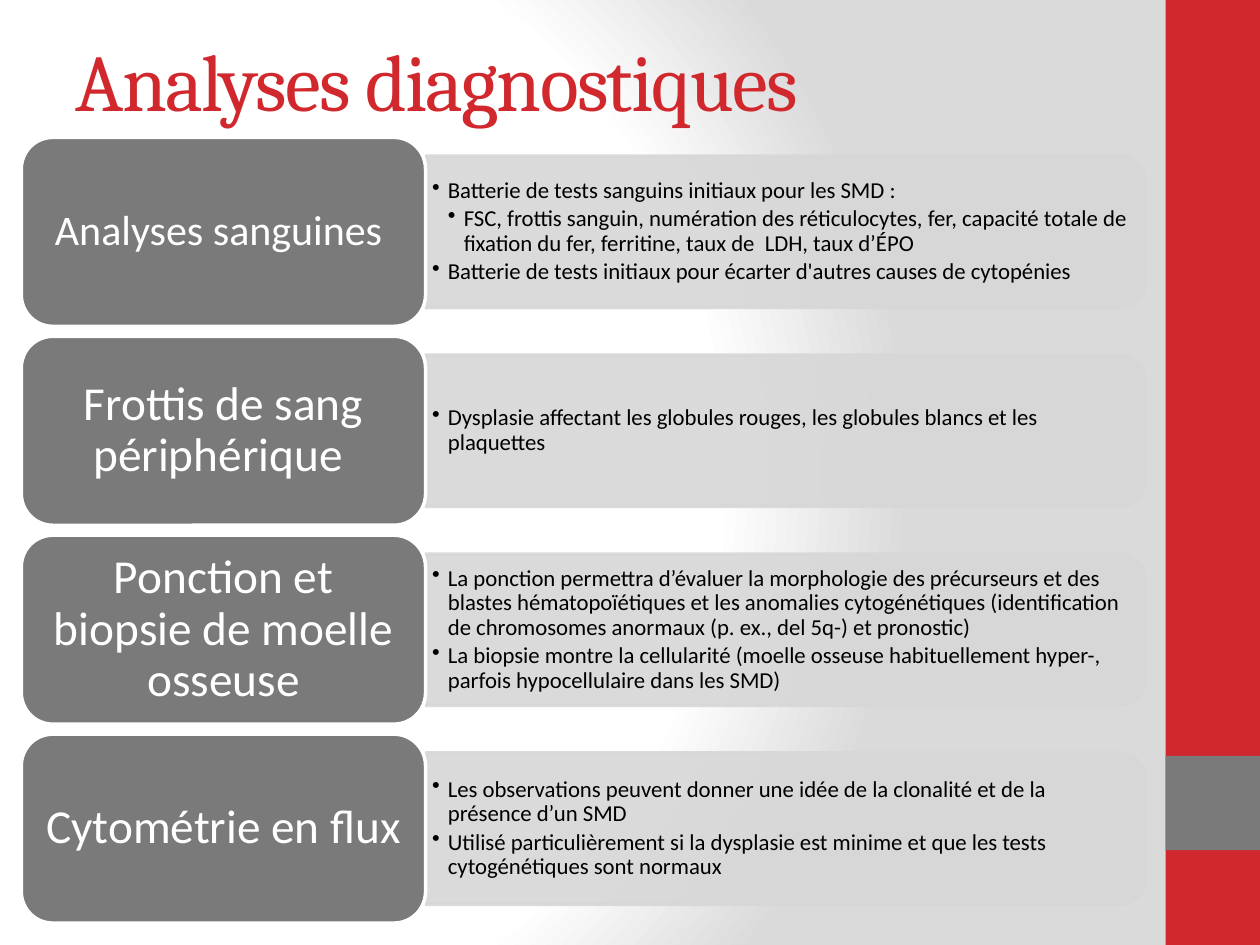
from lxml import etree
from pptx import Presentation
from pptx.dml.color import RGBColor
from pptx.enum.shapes import MSO_SHAPE
from pptx.enum.text import MSO_ANCHOR, PP_ALIGN
from pptx.oxml import parse_xml
from pptx.oxml.ns import nsdecls, qn
from pptx.util import Cm, Pt

RECT = MSO_SHAPE.RECTANGLE
ROUNDED = MSO_SHAPE.ROUNDED_RECTANGLE
ROUNDED_TOP = MSO_SHAPE.ROUND_2_SAME_RECTANGLE
MIDDLE = MSO_ANCHOR.MIDDLE
LEFT, CENTER = PP_ALIGN.LEFT, PP_ALIGN.CENTER

RED = RGBColor(0xD1, 0x28, 0x2E)
GREY = RGBColor(0x7A, 0x7A, 0x7A)
PALE = RGBColor(0xD7, 0xD7, 0xD7)
WHITE = RGBColor(0xFF, 0xFF, 0xFF)
BLACK = RGBColor(0x00, 0x00, 0x00)

# Content: label, label size, details as (level, text)
TITLE = "Analyses diagnostiques"
ANALYSES = [
    ("Analyses sanguines ", 24, [
        (1, "Batterie de tests sanguins initiaux pour les SMD :"),
        (2, "FSC, frottis sanguin, numération des réticulocytes, fer, capacité "
            "totale de fixation du fer, ferritine, taux de  LDH, taux d’ÉPO"),
        (1, "Batterie de tests initiaux pour écarter d'autres causes de cytopénies"),
    ]),
    ("Frottis de sang périphérique ", 27, [
        (1, "Dysplasie affectant les globules rouges, les globules blancs et les "
            "plaquettes"),
    ]),
    ("Ponction et biopsie de moelle osseuse", 27, [
        (1, "La ponction permettra d’évaluer la morphologie des précurseurs et des "
            "blastes hématopoïétiques et les anomalies cytogénétiques (identification "
            "de chromosomes anormaux (p. ex., del 5q-) et pronostic)"),
        (1, "La biopsie montre la cellularité (moelle osseuse habituellement hyper-, "
            "parfois hypocellulaire dans les SMD)"),
    ]),
    ("Cytométrie en flux ", 27, [
        (1, "Les observations peuvent donner une idée de la clonalité et de la "
            "présence d’un SMD"),
        (1, "Utilisé particulièrement si la dysplasie est minime et que les tests "
            "cytogénétiques sont normaux"),
    ]),
]

# Layout
SLIDE_W, SLIDE_H = Cm(25.4), Cm(19.05)
BAND_W = Cm(1.9)
LABEL_X, LABEL_W, LABEL_H = Cm(0.43), Cm(8.15), Cm(3.81)
FIRST_Y, ROW_PITCH = Cm(2.77), Cm(4.01)
PANEL_X, PANEL_W, PANEL_H = LABEL_X + LABEL_W, Cm(14.5), Cm(3.05)
DETAIL_W, DETAIL_H = Cm(14.35), Cm(2.77)
INDENT = Cm(0.32)

TITLE_FONT = {"name": "Cambria", "size": Pt(46)}
DETAIL_FONT = {"name": "Calibri", "size": Pt(13)}
DETAIL_FRAME = {"word_wrap": True, "vertical_anchor": MIDDLE,
                "margin_left": Cm(0.13), "margin_right": Cm(0.13),
                "margin_top": Cm(0.07), "margin_bottom": Cm(0.07)}
LABEL_FRAME = {"word_wrap": True, "vertical_anchor": MIDDLE,
               "margin_left": Cm(0.27), "margin_right": Cm(0.27),
               "margin_top": Cm(0.15), "margin_bottom": Cm(0.15)}

BACKGROUND = f"""<a:gradFill {nsdecls('a')} rotWithShape="1"><a:gsLst>
<a:gs pos="0"><a:srgbClr val="FFFFFF"/></a:gs>
<a:gs pos="75000"><a:srgbClr val="FFFFFF"/></a:gs>
<a:gs pos="100000"><a:srgbClr val="DADADA"/></a:gs></a:gsLst>
<a:path path="circle"><a:fillToRect l="20000" t="50000" r="100000" b="50000"/></a:path>
</a:gradFill>"""


def apply(target, values):
    for attribute, value in values.items():
        setattr(target, attribute, value)


def write(paragraph, text, color, font_values):
    run = paragraph.add_run()
    run.text = text
    apply(run.font, font_values)
    run.font.color.rgb = color
    return run


def add_block(slide, kind, box, fill, line=None):
    block = slide.shapes.add_shape(kind, *box)
    block.shadow.inherit = False
    block.fill.solid()
    block.fill.fore_color.rgb = fill
    if line is None:
        block.line.fill.background()
    else:
        block.line.color.rgb = line
        block.line.width = Pt(2)
    return block


def add_panel(slide, center_y):
    # The shape is drawn upright, then turned about its centre
    center_x = PANEL_X + PANEL_W // 2
    box = (center_x - PANEL_H // 2, center_y - PANEL_W // 2, PANEL_H, PANEL_W)
    panel = add_block(slide, ROUNDED_TOP, box, PALE, PALE)
    panel.rotation = 90
    for color in panel.element.spPr.iter(qn("a:srgbClr")):
        etree.SubElement(color, qn("a:alpha"), val="90000")


def add_details(slide, center_y, details):
    box = slide.shapes.add_textbox(PANEL_X, center_y - DETAIL_H // 2,
                                   DETAIL_W, DETAIL_H)
    frame = box.text_frame
    apply(frame, DETAIL_FRAME)
    for i, (level, text) in enumerate(details):
        paragraph = frame.add_paragraph() if i else frame.paragraphs[0]
        apply(paragraph, {"level": level, "alignment": LEFT,
                          "line_spacing": 0.9, "space_after": Pt(2)})
        properties = paragraph._p.get_or_add_pPr()
        properties.set("marL", str(INDENT * level))
        properties.set("indent", str(-INDENT))
        etree.SubElement(properties, qn("a:buChar"), char="•")
        write(paragraph, text, BLACK, DETAIL_FONT)


def add_label(slide, top, text, size):
    label = add_block(slide, ROUNDED, (LABEL_X, top, LABEL_W, LABEL_H), GREY, WHITE)
    apply(label.text_frame, LABEL_FRAME)
    paragraph = label.text_frame.paragraphs[0]
    apply(paragraph, {"alignment": CENTER, "line_spacing": 0.9})
    write(paragraph, text, WHITE, {"name": "Calibri", "size": Pt(size)})


def main():
    prs = Presentation()
    prs.slide_width, prs.slide_height = SLIDE_W, SLIDE_H
    slide = prs.slides.add_slide(prs.slide_layouts[5])

    # Background
    fill = slide.background.fill
    fill.gradient()
    gradient = slide.element.find(".//" + qn("a:gradFill"))
    gradient.getparent().replace(gradient, parse_xml(BACKGROUND))

    # Side band
    band_x = SLIDE_W - BAND_W
    add_block(slide, RECT, (band_x, 0, BAND_W, SLIDE_H), RED)
    add_block(slide, RECT, (band_x, Cm(15.24), BAND_W, BAND_W), GREY)

    # Title
    title = slide.shapes.title
    apply(title, {"left": Cm(1.27), "top": 0, "width": Cm(21.16), "height": Cm(3.18)})
    apply(title.text_frame, {"word_wrap": True, "vertical_anchor": MIDDLE})
    heading = title.text_frame.paragraphs[0]
    heading.alignment = LEFT
    run = write(heading, TITLE, RED, TITLE_FONT)
    run._r.get_or_add_rPr().set("spc", "-100")

    # One row per analysis
    for row, (label, size, details) in enumerate(ANALYSES):
        top = FIRST_Y + row * ROW_PITCH
        center_y = top + LABEL_H // 2
        add_panel(slide, center_y)
        add_details(slide, center_y, details)
        add_label(slide, top, label, size)

    prs.save("out.pptx")


if __name__ == "__main__":
    main()
